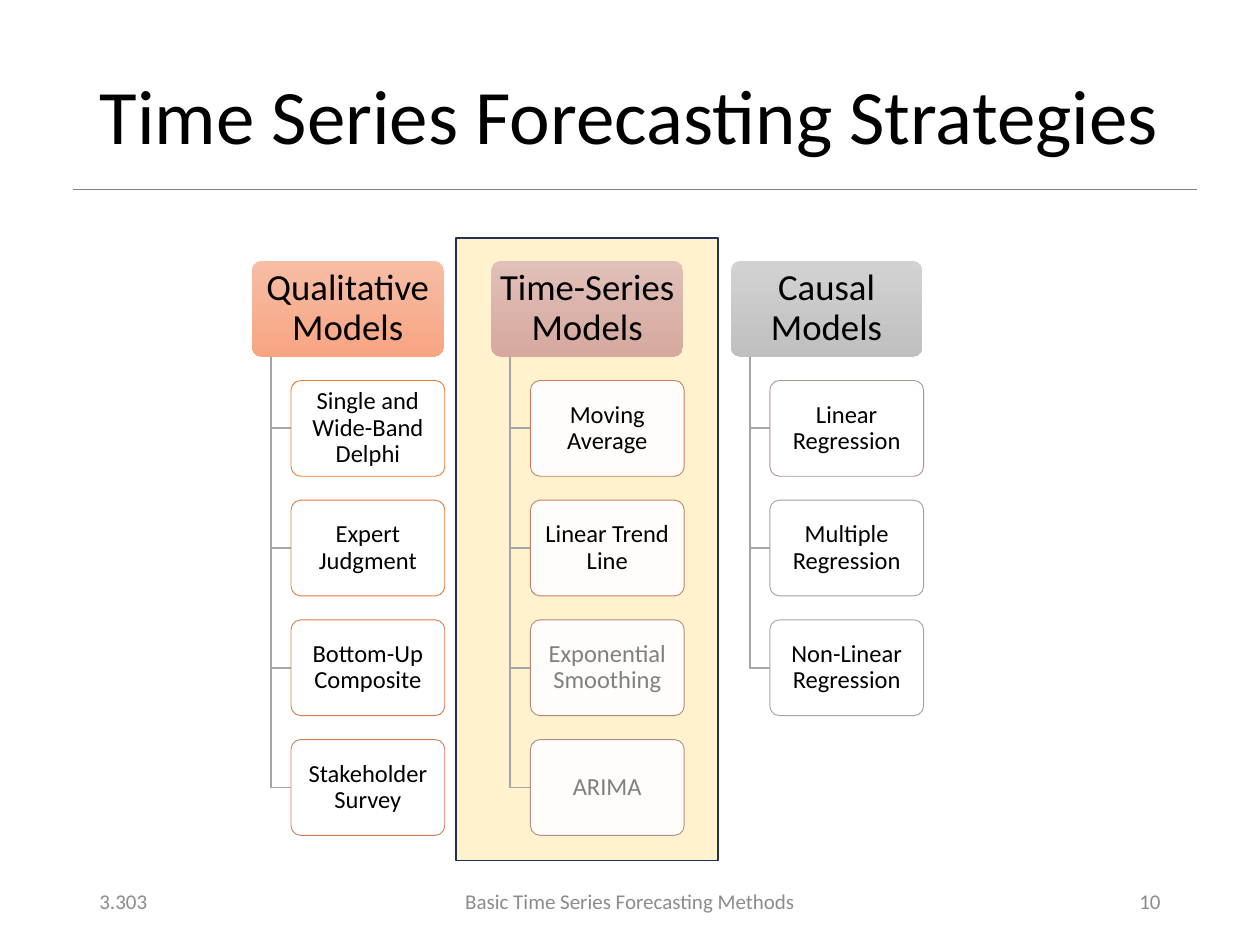
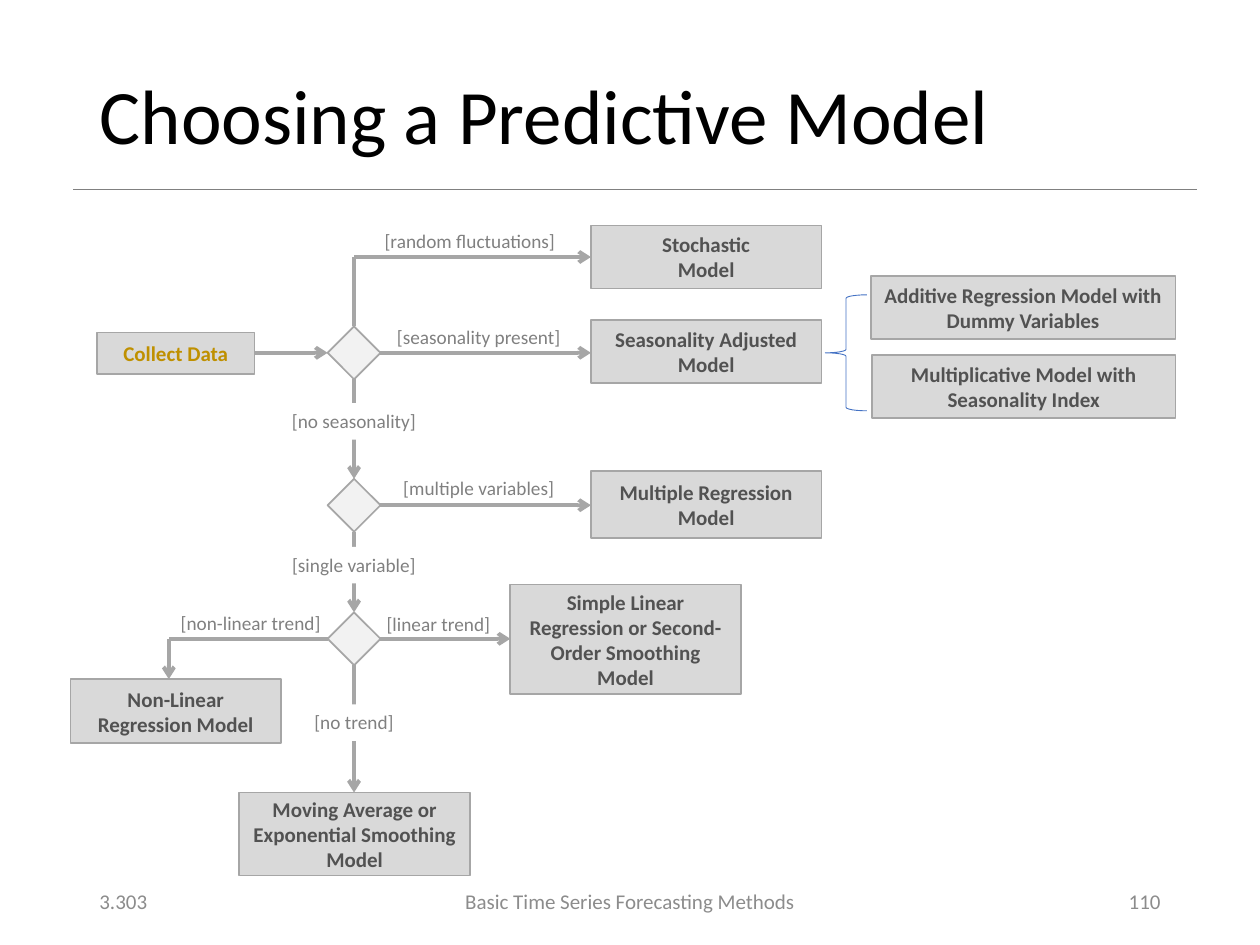
"""Build two slides on time series forecasting: a model tree and a decision flow."""
from dataclasses import dataclass
from typing import NamedTuple, Optional

from lxml.etree import SubElement
from pptx import Presentation
from pptx.dml.color import RGBColor
from pptx.enum.shapes import MSO_CONNECTOR, MSO_SHAPE
from pptx.enum.text import MSO_ANCHOR, MSO_AUTO_SIZE, PP_ALIGN
from pptx.oxml.ns import qn
from pptx.shapes.autoshape import Shape
from pptx.slide import Slide
from pptx.text.text import TextFrame
from pptx.util import Inches, Length, Pt


def tint(code: str) -> RGBColor:
    return RGBColor.from_string(code)


@dataclass(frozen=True)
class Theme:
    font: str = "Calibri"
    black: RGBColor = tint("000000")
    white: RGBColor = tint("FFFFFF")
    muted: RGBColor = tint("808080")
    foot: RGBColor = tint("8C8C8C")
    branch: RGBColor = tint("A5A5A5")
    edge: RGBColor = tint("A6A6A6")
    box: RGBColor = tint("D9D9D9")
    gate: RGBColor = tint("F2F2F2")
    ink: RGBColor = tint("525252")
    gold: RGBColor = tint("BF9000")
    brace: RGBColor = tint("4472C4")
    band: RGBColor = tint("FFF2CC")
    navy: RGBColor = tint("1E3256")
    title_size: Length = Pt(44)
    head_size: Length = Pt(21)
    card_size: Length = Pt(14)
    box_size: Length = Pt(12)
    label_size: Length = Pt(11)
    hair: Length = Pt(0.5)
    thin: Length = Pt(1)
    thick: Length = Pt(2.25)


THEME = Theme()


class Area(NamedTuple):
    left: float
    top: float
    width: float
    height: float

    def place(self) -> list[Length]:
        return [Inches(side) for side in self]


class Style(NamedTuple):
    size: Length
    color: RGBColor
    bold: bool = False
    align: PP_ALIGN = PP_ALIGN.CENTER
    anchor: MSO_ANCHOR = MSO_ANCHOR.MIDDLE
    space: float = 1.0
    wrap: bool = True


class Card(NamedTuple):
    text: str
    line: str
    muted: bool = False


class Group(NamedTuple):
    head: str
    light: str
    dark: str
    cards: list[Card]


class Box(NamedTuple):
    text: str
    area: Area
    color: RGBColor = THEME.ink


class Label(NamedTuple):
    text: str
    mid: float
    top: float
    width: float
    solid: bool = False


class Link(NamedTuple):
    x1: float
    y1: float
    x2: float
    y2: float
    arrow: bool = True


FOOT = Style(THEME.box_size, THEME.foot)
HEAD = Style(THEME.head_size, THEME.black, space=0.9)
CARD = Style(THEME.card_size, THEME.black, space=0.9)
LABEL = Style(THEME.label_size, THEME.muted, anchor=MSO_ANCHOR.TOP, wrap=False)

TREE_LEFT, TREE_TOP = 2.0, 2.07
HEAD_W, CARD_W, TILE_H = 1.52, 1.22, 0.76
COL_STEP, ROW_STEP = HEAD_W * 1.25, TILE_H * 1.25
STEM, INDENT = 0.15, 0.31
TILE_PAD = 0.02

GROUPS = [
    Group("Qualitative Models", "F7BDA5", "F8A582", [
        Card("Single and Wide-Band Delphi", "ED7D31"),
        Card("Expert Judgment", "E47B3E"),
        Card("Bottom-Up Composite", "DC7A4B"),
        Card("Stakeholder Survey", "D47B58"),
    ]),
    Group("Time-Series Models", "E0C0B9", "D7A89E", [
        Card("Moving Average", "CC7D64"),
        Card("Linear Trend Line", "C48170"),
        Card("Exponential Smoothing", "BD867B", True),
        Card("ARIMA", "B78C86", True),
    ]),
    Group("Causal Models", "D2D2D2", "C0C0C0", [
        Card("Linear Regression", "B09391"),
        Card("Multiple Regression", "AB9C9B"),
        Card("Non-Linear Regression", "A5A5A5"),
    ]),
]

SPINE, GATE = 2.81, 0.42
ROWS = [2.8, 4.01, 5.07]
HALF = GATE / 2
WEST, EAST = SPINE - HALF, SPINE + HALF
MODEL_X, MODEL_W = 4.69, 1.83
TURN_Y, TURN_X, LAST_Y = 2.04, 1.34, 6.29

LINKS = [
    Link(2.02, ROWS[0], WEST, ROWS[0]),
    Link(SPINE, ROWS[0] - HALF, SPINE, TURN_Y, False),
    Link(SPINE, TURN_Y, MODEL_X, TURN_Y),
    Link(EAST, ROWS[0], MODEL_X, ROWS[0]),
    Link(EAST, ROWS[1], MODEL_X, ROWS[1]),
    Link(EAST, ROWS[2], 4.05, ROWS[2]),
    Link(WEST, ROWS[2], TURN_X, ROWS[2], False),
    Link(TURN_X, ROWS[2], TURN_X, 5.39),
    *[Link(SPINE, row + HALF, SPINE, end)
      for row, end in zip(ROWS, [ROWS[1] - HALF, ROWS[2] - HALF, LAST_Y])],
]

BOXES = [
    Box("Collect Data", Area(0.77, 2.64, 1.25, 0.33), THEME.gold),
    Box("Stochastic\nModel", Area(MODEL_X, 1.79, MODEL_W, 0.5)),
    Box("Seasonality Adjusted Model", Area(MODEL_X, 2.54, MODEL_W, 0.5)),
    Box("Additive Regression Model with Dummy Variables", Area(6.91, 2.19, 2.42, 0.5)),
    Box("Multiplicative Model with Seasonality Index", Area(6.92, 2.82, 2.41, 0.5)),
    Box("Multiple Regression Model", Area(MODEL_X, 3.74, MODEL_W, 0.53)),
    Box("Simple Linear Regression or Second-Order Smoothing Model",
        Area(4.05, 4.64, MODEL_W, 0.87)),
    Box("Non-Linear Regression Model", Area(0.56, 5.39, 1.67, 0.51)),
    Box("Moving Average or Exponential Smoothing Model",
        Area(1.9, LAST_Y, MODEL_W, 0.66)),
]

LABELS = [
    Label("[random fluctuations]", 3.73, 1.77, 1.63),
    Label("[seasonality present]", 3.8, 2.53, 1.61),
    Label("[multiple variables]", 3.8, 3.73, 1.48),
    Label("[linear trend]", 3.48, 4.81, 1.06),
    Label("[non-linear trend]", 1.99, 4.8, 1.37),
    Label("[no seasonality]", SPINE, 3.2, 1.27, True),
    Label("[single variable]", SPINE, 4.34, 1.27, True),
    Label("[no trend]", SPINE, 5.59, 0.85, True),
]


def write(frame: TextFrame, text: str, style: Style, inset: Optional[float] = None) -> None:
    frame.word_wrap = style.wrap
    frame.auto_size = MSO_AUTO_SIZE.NONE
    frame.vertical_anchor = style.anchor
    if inset is not None:
        frame.margin_left = frame.margin_right = Inches(inset)
        frame.margin_top = frame.margin_bottom = Inches(inset)
    para = frame.paragraphs[0]
    para.alignment = style.align
    para.line_spacing = style.space
    for count, part in enumerate(text.split("\n")):
        if count:
            para.add_line_break()
        run = para.add_run()
        run.text = part
        run.font.name = THEME.font
        run.font.size = style.size
        run.font.bold = style.bold
        run.font.color.rgb = style.color


def paint(shape: Shape, fill: Optional[RGBColor] = None, line: Optional[RGBColor] = None,
          width: Length = THEME.thin) -> Shape:
    shape.shadow.inherit = False
    if fill is None:
        shape.fill.background()
    else:
        shape.fill.solid()
        shape.fill.fore_color.rgb = fill
    if line is None:
        shape.line.fill.background()
    else:
        shape.line.color.rgb = line
        shape.line.width = width
    return shape


def add_line(slide: Slide, link: Link, color: RGBColor, width: Length) -> None:
    ends = [Inches(end) for end in link[:4]]
    line = slide.shapes.add_connector(MSO_CONNECTOR.STRAIGHT, *ends)
    line.line.color.rgb = color
    line.line.width = width
    props = line._element.spPr
    if link.arrow:
        SubElement(props.find(qn("a:ln")), qn("a:tailEnd")).set("type", "arrow")
    SubElement(props, qn("a:effectLst"))


def add_text(slide: Slide, area: Area, text: str, style: Style) -> Shape:
    box = slide.shapes.add_textbox(*area.place())
    write(box.text_frame, text, style)
    return box


def add_frame(deck: Presentation, title: str, page: str) -> Slide:
    slide = deck.slides.add_slide(deck.slide_layouts[5])
    head = slide.shapes.title
    head.left, head.top, head.width, head.height = Area(0.69, 0.4, 8.62, 1.1).place()
    write(head.text_frame, title,
          Style(THEME.title_size, THEME.black, align=PP_ALIGN.LEFT, space=0.9))
    add_line(slide, Link(0.58, 1.5, 9.5, 1.5, False), THEME.muted, THEME.hair)
    for left, width, text, align in [
        (0.69, 2.25, "3.303", PP_ALIGN.LEFT),
        (3.31, 3.38, "Basic Time Series Forecasting Methods", PP_ALIGN.CENTER),
        (7.06, 2.25, page, PP_ALIGN.RIGHT),
    ]:
        add_text(slide, Area(left, 6.95, width, 0.4), text, FOOT._replace(align=align))
    return slide


def add_tile(slide: Slide, area: Area) -> Shape:
    tile = slide.shapes.add_shape(MSO_SHAPE.ROUNDED_RECTANGLE, *area.place())
    tile.adjustments[0] = 0.1
    return tile


def add_group(slide: Slide, group: Group, left: float) -> None:
    head = paint(add_tile(slide, Area(left, TREE_TOP, HEAD_W, TILE_H)))
    head.fill.gradient()
    head.fill.gradient_angle = 270
    for stop, code in zip(head.fill.gradient_stops, (group.light, group.dark)):
        stop.color.rgb = tint(code)
    write(head.text_frame, group.head, HEAD, TILE_PAD)
    stem, edge, base = left + STEM, left + INDENT, TREE_TOP + TILE_H
    for row, card in enumerate(group.cards, 1):
        top = TREE_TOP + row * ROW_STEP
        mid = top + TILE_H / 2
        path = slide.shapes.build_freeform(Inches(stem), Inches(base))
        path.add_line_segments([(Inches(stem), Inches(mid)), (Inches(edge), Inches(mid))],
                               close=False)
        paint(path.convert_to_shape(), line=THEME.branch)
        tile = paint(add_tile(slide, Area(edge, top, CARD_W, TILE_H)),
                     THEME.white, tint(card.line), THEME.hair)
        color = tile._element.spPr.find(qn("a:solidFill"))[0]
        SubElement(color, qn("a:alpha")).set("val", "90000")
        ink = THEME.muted if card.muted else THEME.black
        write(tile.text_frame, card.text, CARD._replace(color=ink), TILE_PAD)


def draw_tree(deck: Presentation) -> None:
    slide = add_frame(deck, "Time Series Forecasting Strategies", "10")
    band = slide.shapes.add_shape(MSO_SHAPE.RECTANGLE, *Area(3.62, 1.89, 2.08, 4.94).place())
    paint(band, THEME.band, THEME.navy)
    for col, group in enumerate(GROUPS):
        add_group(slide, group, TREE_LEFT + col * COL_STEP)


def draw_flow(deck: Presentation) -> None:
    slide = add_frame(deck, "Choosing a Predictive Model", "110")
    for link in LINKS:
        add_line(slide, link, THEME.edge, THEME.thick)
    for row in ROWS:
        area = Area(WEST, row - HALF, GATE, GATE)
        paint(slide.shapes.add_shape(MSO_SHAPE.DIAMOND, *area.place()), THEME.gate, THEME.edge)
    for box in BOXES:
        shape = slide.shapes.add_shape(MSO_SHAPE.RECTANGLE, *box.area.place())
        paint(shape, THEME.box, THEME.edge)
        write(shape.text_frame, box.text, Style(THEME.box_size, box.color, True))
    brace = slide.shapes.add_shape(MSO_SHAPE.LEFT_BRACE, *Area(6.55, 2.34, 0.33, 0.92).place())
    paint(brace, line=THEME.brace, width=THEME.hair)
    for label in LABELS:
        area = Area(label.mid - label.width / 2, label.top, label.width, 0.29)
        shape = add_text(slide, area, label.text, LABEL)
        if label.solid:
            paint(shape, THEME.white)


def main() -> None:
    deck = Presentation()
    deck.slide_width, deck.slide_height = Inches(10), Inches(7.5)
    draw_tree(deck)
    draw_flow(deck)
    deck.save("out.pptx")


if __name__ == "__main__":
    main()
